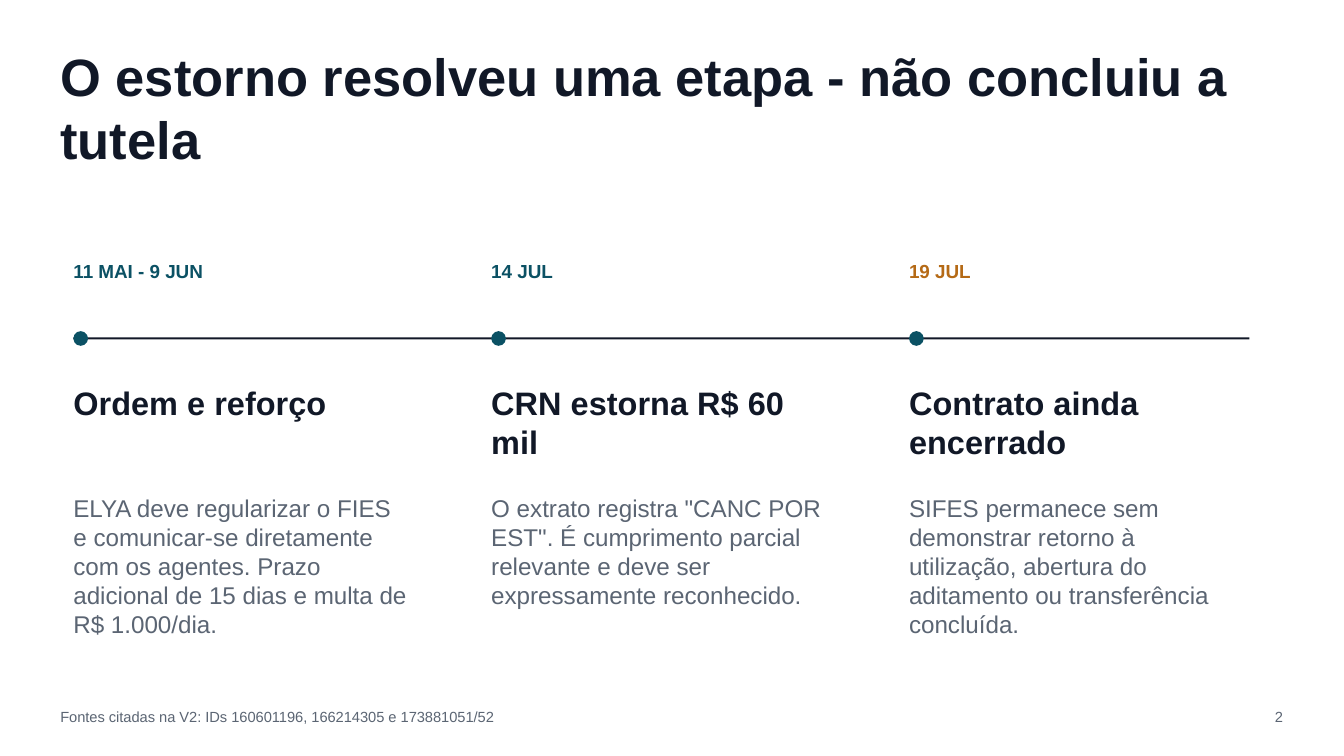
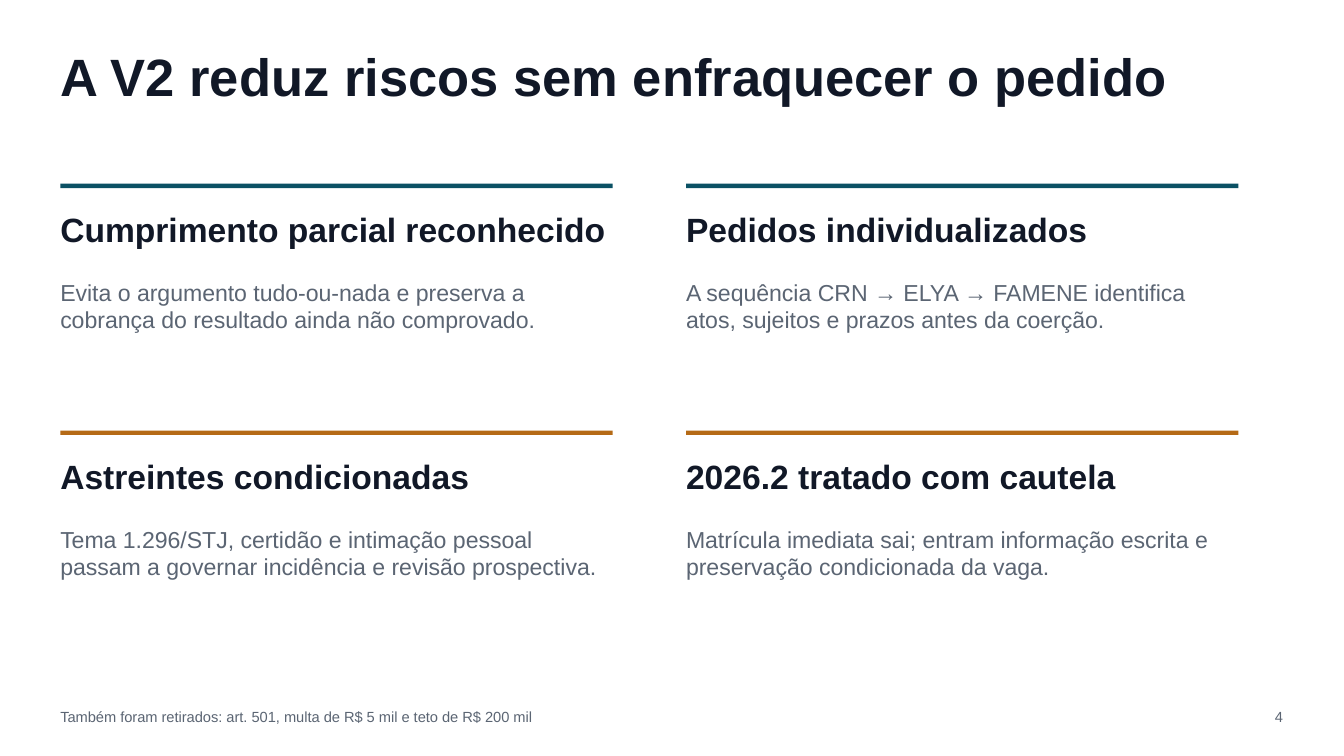
from pptx import Presentation
from pptx.dml.color import RGBColor
from pptx.enum.shapes import MSO_SHAPE
from pptx.enum.text import PP_ALIGN
from pptx.util import Cm, Pt

# Shared style
INK = RGBColor(0x11, 0x18, 0x27)
GRAY = RGBColor(0x5B, 0x65, 0x73)
TEAL = RGBColor(0x0B, 0x51, 0x64)
AMBER = RGBColor(0xB5, 0x6A, 0x16)
WHITE = RGBColor(0xFF, 0xFF, 0xFF)
FONT = "Arial"
MARGIN = 1.52
CONTENT_WIDTH = 29.64

# Timeline geometry, in centimetres
TIMELINE_LEFT = 1.85
TIMELINE_PITCH = 10.53
AXIS_MIDDLE = 8.53
AXIS_HEIGHT = 0.05
DOT_SIZE = 0.37

# Card grid geometry, in centimetres
GRID_TOP = 4.63
CARD_WIDTH = 13.92
COLUMN_PITCH = 15.77
ROW_PITCH = 6.22

MILESTONES = [
    ("11 MAI - 9 JUN", TEAL, "Ordem e reforço",
     "ELYA deve regularizar o FIES e comunicar-se diretamente com os agentes. "
     "Prazo adicional de 15 dias e multa de R$ 1.000/dia."),
    ("14 JUL", TEAL, "CRN estorna R$ 60 mil",
     'O extrato registra "CANC POR EST". É cumprimento parcial relevante '
     "e deve ser expressamente reconhecido."),
    ("19 JUL", AMBER, "Contrato ainda encerrado",
     "SIFES permanece sem demonstrar retorno à utilização, abertura do "
     "aditamento ou transferência concluída."),
]

CARD_ROWS = [
    (TEAL, [
        ("Cumprimento parcial reconhecido",
         "Evita o argumento tudo-ou-nada e preserva a cobrança do resultado "
         "ainda não comprovado."),
        ("Pedidos individualizados",
         "A sequência CRN → ELYA → FAMENE identifica atos, sujeitos e prazos "
         "antes da coerção."),
    ]),
    (AMBER, [
        ("Astreintes condicionadas",
         "Tema 1.296/STJ, certidão e intimação pessoal passam a governar "
         "incidência e revisão prospectiva."),
        ("2026.2 tratado com cautela",
         "Matrícula imediata sai; entram informação escrita e preservação "
         "condicionada da vaga."),
    ]),
]


def add_text(slide, text, left, top, width, height, size, color,
             bold=False, align=PP_ALIGN.LEFT):
    shape = slide.shapes.add_textbox(Cm(left), Cm(top), Cm(width), Cm(height))
    text_frame = shape.text_frame
    text_frame.word_wrap = True
    text_frame.margin_left = text_frame.margin_right = 0
    text_frame.margin_top = text_frame.margin_bottom = 0
    text_frame.text = text
    paragraph = text_frame.paragraphs[0]
    paragraph.alignment = align
    font = paragraph.runs[0].font
    font.name = FONT
    font.size = Pt(size)
    font.bold = bold
    font.color.rgb = color


def add_solid(slide, kind, left, top, width, height, color):
    shape = slide.shapes.add_shape(kind, Cm(left), Cm(top), Cm(width), Cm(height))
    shape.shadow.inherit = False
    shape.fill.solid()
    shape.fill.fore_color.rgb = color
    shape.line.fill.background()


def add_base_slide(presentation, title, footer, number):
    """Blank slide with the shared title, source line and page number."""
    slide = presentation.slides.add_slide(presentation.slide_layouts[6])
    slide.background.fill.solid()
    slide.background.fill.fore_color.rgb = WHITE
    add_text(slide, title, MARGIN, 1.12, CONTENT_WIDTH, 2.01, 37.5, INK, bold=True)
    add_text(slide, footer, MARGIN, 17.83, 13.76, 0.53, 10.5, GRAY)
    add_text(slide, str(number), 31.27, 17.83, 1.06, 0.53, 10.5, GRAY,
             align=PP_ALIGN.RIGHT)
    return slide


def add_milestone(slide, left, date, date_color, heading, body):
    add_solid(slide, MSO_SHAPE.OVAL, left, AXIS_MIDDLE - DOT_SIZE / 2,
              DOT_SIZE, DOT_SIZE, TEAL)
    add_text(slide, date, left, 6.55, 7.94, 0.79, 13.5, date_color, bold=True)
    add_text(slide, heading, left, 9.66, 8.47, 2.01, 23.25, INK, bold=True)
    add_text(slide, body, left, 12.44, 8.47, 3.84, 17.25, GRAY)


def add_card(slide, left, top, color, heading, body):
    add_solid(slide, MSO_SHAPE.RECTANGLE, left, top, CARD_WIDTH, 0.11, color)
    add_text(slide, heading, left, top + 0.64, CARD_WIDTH, 1.32, 24, INK, bold=True)
    add_text(slide, body, left, top + 2.38, CARD_WIDTH, 2.78, 16.5, GRAY)


def build_timeline_slide(presentation):
    slide = add_base_slide(
        presentation, "O estorno resolveu uma etapa - não concluiu a tutela",
        "Fontes citadas na V2: IDs 160601196, 166214305 e 173881051/52", 2)
    add_solid(slide, MSO_SHAPE.RECTANGLE, TIMELINE_LEFT,
              AXIS_MIDDLE - AXIS_HEIGHT / 2, CONTENT_WIDTH, AXIS_HEIGHT, INK)
    for index, milestone in enumerate(MILESTONES):
        add_milestone(slide, TIMELINE_LEFT + index * TIMELINE_PITCH, *milestone)


def build_cards_slide(presentation):
    slide = add_base_slide(
        presentation, "A V2 reduz riscos sem enfraquecer o pedido",
        "Também foram retirados: art. 501, multa de R$ 5 mil e teto de R$ 200 mil", 4)
    for row, (color, cards) in enumerate(CARD_ROWS):
        for column, (heading, body) in enumerate(cards):
            add_card(slide, MARGIN + column * COLUMN_PITCH,
                     GRID_TOP + row * ROW_PITCH, color, heading, body)


def main():
    presentation = Presentation()
    presentation.slide_width = Cm(33.87)
    presentation.slide_height = Cm(19.05)
    build_timeline_slide(presentation)
    build_cards_slide(presentation)
    presentation.save("out.pptx")


if __name__ == "__main__":
    main()
